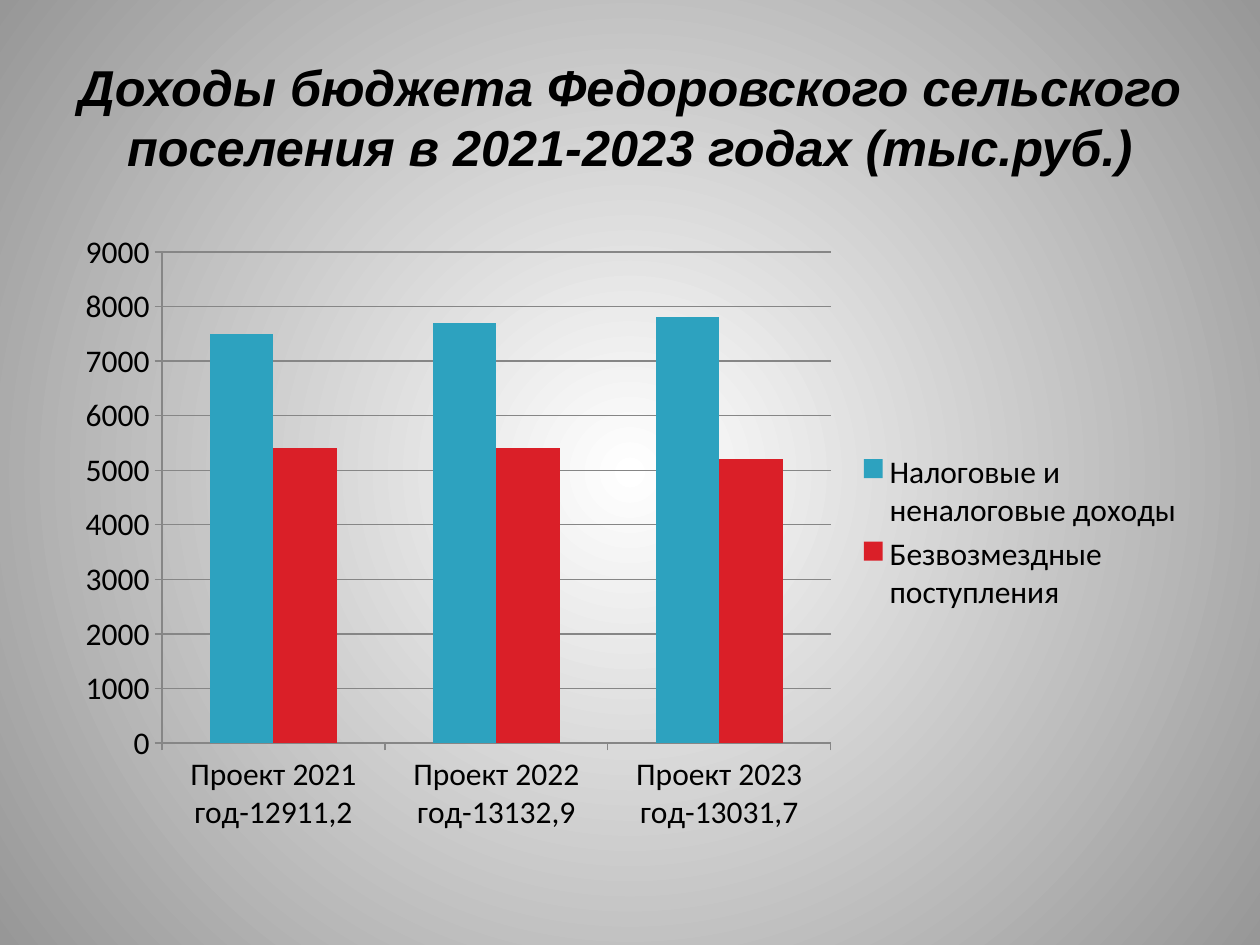
from lxml import etree
from pptx import Presentation
from pptx.chart.data import CategoryChartData
from pptx.dml.color import RGBColor
from pptx.enum.chart import XL_CHART_TYPE, XL_LEGEND_POSITION, XL_TICK_MARK
from pptx.enum.text import MSO_ANCHOR, MSO_AUTO_SIZE, PP_ALIGN
from pptx.oxml import parse_xml
from pptx.oxml.ns import nsdecls, qn
from pptx.util import Inches, Pt

COLUMNS = XL_CHART_TYPE.COLUMN_CLUSTERED
RIGHT = XL_LEGEND_POSITION.RIGHT
OUTSIDE, NO_TICK = XL_TICK_MARK.OUTSIDE, XL_TICK_MARK.NONE
MIDDLE, NO_FIT, CENTER = MSO_ANCHOR.MIDDLE, MSO_AUTO_SIZE.NONE, PP_ALIGN.CENTER

HEADING = "Доходы бюджета Федоровского сельского поселения в 2021-2023 годах (тыс.руб.)"
YEARS = ["Проект 2021 год-12911,2", "Проект 2022 год-13132,9", "Проект 2023 год-13031,7"]
INCOME = [
    ("Налоговые и неналоговые доходы", [7500, 7700, 7800]),
    ("Безвозмездные поступления", [5400, 5400, 5200]),
]

BLACK = RGBColor(0, 0, 0)
THEME = {
    "background": [(0, "FFFFFF"), (100, "979797")],
    "series": ["2DA2BF", "DA1F28"],
    "grid": "868686",
    "heading": {"name": "Arial", "size": Pt(28.8), "bold": True, "italic": True},
    "chart": {"name": "Calibri", "size": Pt(18)},
}
SLIDE_WIDTH, SLIDE_HEIGHT = Inches(10), Inches(7.5)
HEADING_AREA = (0.05, 0.04, 0.9, 1 / 6)
CHART_AREA = (0.05, 7 / 30, 0.9, 0.66)


def apply(target, values):
    for key, value in values.items():
        setattr(target, key, value)


def style_font(font, values):
    apply(font, values)
    font.color.rgb = BLACK


def area_box(shares):
    sides = (SLIDE_WIDTH, SLIDE_HEIGHT) * 2
    return [round(share * side) for share, side in zip(shares, sides)]


def paint_background(slide):
    fill = slide.background.fill
    fill.solid()
    solid = slide.element.find(".//" + qn("p:bgPr")).find(qn("a:solidFill"))
    stops = "".join(
        f'<a:gs pos="{share * 1000}"><a:srgbClr val="{color}"/></a:gs>'
        for share, color in THEME["background"]
    )
    solid.getparent().replace(solid, parse_xml(
        f'<a:gradFill {nsdecls("a")} rotWithShape="1"><a:gsLst>{stops}</a:gsLst>'
        '<a:path path="circle"><a:fillToRect l="50000" t="50000" r="50000" b="50000"/>'
        "</a:path></a:gradFill>"
    ))


def add_heading(slide):
    heading = slide.shapes.title
    apply(heading, dict(zip(("left", "top", "width", "height"), area_box(HEADING_AREA))))
    frame = heading.text_frame
    frame.text = HEADING
    apply(frame, {"word_wrap": True, "auto_size": NO_FIT, "vertical_anchor": MIDDLE})
    paragraph = frame.paragraphs[0]
    paragraph.alignment = CENTER
    style_font(paragraph.runs[0].font, THEME["heading"])


def add_income_chart(slide):
    data = CategoryChartData(number_format="General")
    data.categories = YEARS
    for name, amounts in INCOME:
        data.add_series(name, amounts)
    chart = slide.shapes.add_chart(COLUMNS, *area_box(CHART_AREA), data).chart
    apply(chart, {"has_title": False, "has_legend": True})
    style_font(chart.font, THEME["chart"])
    apply(chart.legend, {"position": RIGHT, "include_in_layout": False})

    plot = chart.plots[0]
    apply(plot, {"gap_width": 150, "overlap": 0, "vary_by_categories": False})
    for series, color in zip(plot.series, THEME["series"]):
        series.format.fill.solid()
        series.format.fill.fore_color.rgb = RGBColor.from_string(color)

    amounts_axis, years_axis = chart.value_axis, chart.category_axis
    apply(amounts_axis, {"minimum_scale": 0, "maximum_scale": 9000,
                         "major_unit": 1000, "has_major_gridlines": True})
    apply(amounts_axis.tick_labels, {"number_format": "0", "number_format_is_linked": False})
    for axis in (amounts_axis, years_axis):
        apply(axis, {"major_tick_mark": OUTSIDE, "minor_tick_mark": NO_TICK})
    for part in (amounts_axis, years_axis, amounts_axis.major_gridlines):
        part.format.line.width = Pt(0.75)
        part.format.line.color.rgb = RGBColor.from_string(THEME["grid"])


def main():
    deck = Presentation()
    apply(deck, {"slide_width": SLIDE_WIDTH, "slide_height": SLIDE_HEIGHT})
    slide = deck.slides.add_slide(deck.slide_layouts[5])
    paint_background(slide)
    add_heading(slide)
    add_income_chart(slide)
    deck.save("out.pptx")


if __name__ == "__main__":
    main()
